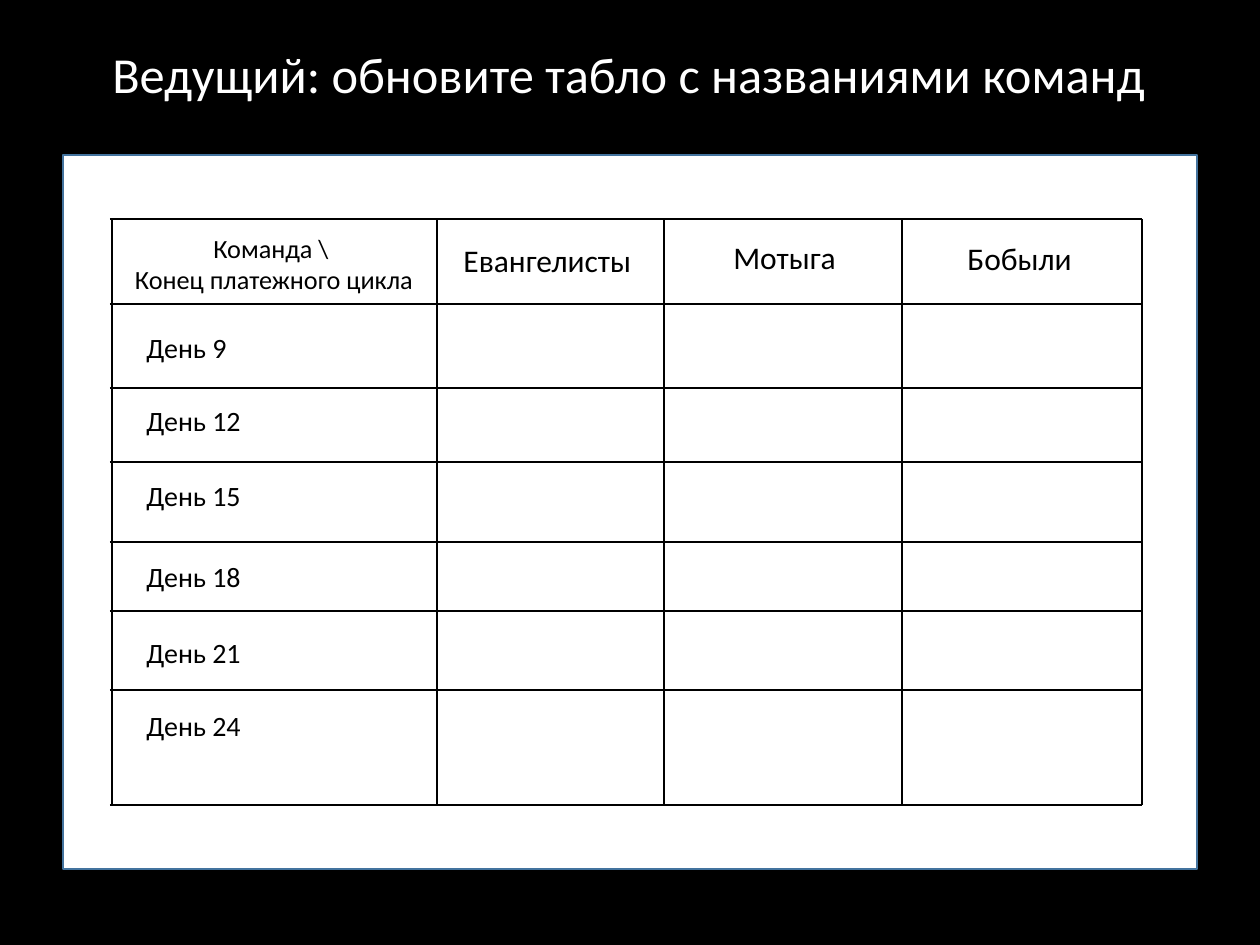
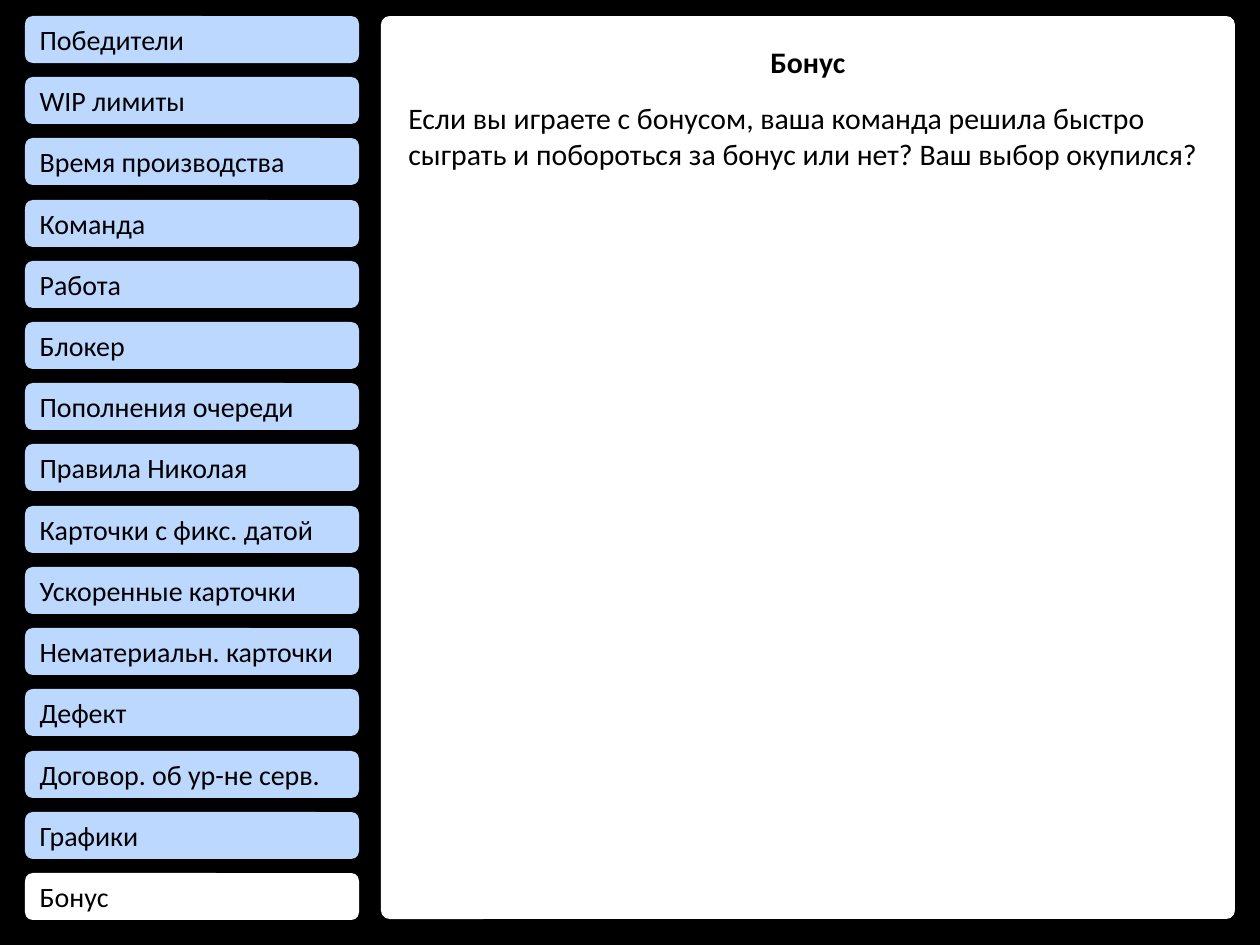
"""Build the team scoreboard slide and the bonus review slide."""

from dataclasses import dataclass

import pptx
import pptx.dml.color
import pptx.enum.shapes
import pptx.enum.text
import pptx.oxml
import pptx.oxml.ns
import pptx.util

RGBColor = pptx.dml.color.RGBColor
ALIGN = pptx.enum.text.PP_ALIGN
ANCHOR = pptx.enum.text.MSO_ANCHOR
FIT = pptx.enum.text.MSO_AUTO_SIZE
SHAPE = pptx.enum.shapes.MSO_SHAPE

BLACK = RGBColor(0x00, 0x00, 0x00)
WHITE = RGBColor(0xFF, 0xFF, 0xFF)
BLUE = RGBColor(0xBD, 0xD8, 0xFF)
EDGE = RGBColor(0x43, 0x73, 0x9E)
FONT = "Calibri"
SCALE = 914400 / 126


@dataclass(frozen=True)
class Box:
    """A place on the slide in px."""

    left: int
    top: int
    width: int
    height: int


@dataclass(frozen=True)
class Label:
    """A text box in the score grid."""

    text: str
    box: Box
    size: int
    align: ALIGN = ALIGN.LEFT


@dataclass(frozen=True)
class Panel:
    """A filled shape."""

    box: Box
    fill: RGBColor = WHITE
    kind: SHAPE = SHAPE.ROUNDED_RECTANGLE


ROWS = (219, 304, 388, 462, 542, 611, 690, 805)
COLS = (112, 437, 664, 902, 1142)
GRID_LEFT = 110
DAYS = ((9, 324), (12, 397), (15, 472), (18, 553), (21, 629), (24, 702))
HEADS = (
    Label("\n".join((r"Команда \ ", "Конец платежного цикла")),
          Box(121, 226, 306, 77), 15, ALIGN.CENTER),
    Label("Евангелисты", Box(451, 235, 195, 50), 18),
    Label("Мотыга", Box(721, 232, 129, 50), 18),
    Label("Бобыли", Box(955, 233, 131, 50), 18),
)
TOPICS = (
    "Победители",
    "WIP лимиты",
    "Время производства",
    "Команда",
    "Работа",
    "Блокер",
    "Пополнения очереди",
    "Правила Николая",
    "Карточки с фикс. датой",
    "Ускоренные карточки",
    "Нематериальн. карточки",
    "Дефект",
    "Договор. об ур-не серв.",
    "Графики",
    "Бонус",
)
ACTIVE = "Бонус"
QUESTION = ("Если вы играете с бонусом, ваша команда решила быстро сыграть "
            "и побороться за бонус или нет? Ваш выбор окупился?")
TAB_TOP, TAB_SPAN = 16, 857


def px(count: int) -> pptx.util.Emu:
    """Turn px into EMU."""
    return pptx.util.Emu(round(count * SCALE))


def place(box: Box) -> tuple:
    """Give the box edges in EMU."""
    return px(box.left), px(box.top), px(box.width), px(box.height)


def write(frame, text: str, size: float, color: RGBColor = BLACK,
          align: ALIGN = ALIGN.LEFT) -> None:
    """Set the text of a frame and format its runs."""
    frame.text = text
    for para in frame.paragraphs:
        para.alignment = align
        for run in para.runs:
            run.font.name = FONT
            run.font.size = pptx.util.Pt(size)
            run.font.color.rgb = color


def add_slide(deck, layout: int):
    """Add a slide with a black ground."""
    slide = deck.slides.add_slide(deck.slide_layouts[layout])
    slide.background.fill.solid()
    slide.background.fill.fore_color.rgb = BLACK
    return slide


def add_panel(slide, panel: Panel):
    """Draw a filled shape with no outline."""
    shape = slide.shapes.add_shape(panel.kind, *place(panel.box))
    shape.shadow.inherit = False
    shape.fill.solid()
    shape.fill.fore_color.rgb = panel.fill
    shape.line.fill.background()
    return shape


def add_line(slide, left: int, top: int, right: int, base: int) -> None:
    """Draw one black grid line."""
    line = slide.shapes.add_connector(
        pptx.enum.shapes.MSO_CONNECTOR.STRAIGHT,
        px(left), px(top), px(right), px(base))
    line.line.color.rgb = BLACK
    line.line.width = pptx.util.Pt(1.5)
    line.element.spPr.append(
        pptx.oxml.parse_xml(f"<a:effectLst {pptx.oxml.ns.nsdecls('a')}/>"))


def add_label(slide, label: Label) -> None:
    """Draw one grid label."""
    frame = slide.shapes.add_textbox(*place(label.box)).text_frame
    frame.word_wrap = False
    frame.auto_size = FIT.SHAPE_TO_FIT_TEXT
    write(frame, label.text, label.size, align=label.align)


def add_title(slide, text: str) -> None:
    """Place and format the slide title."""
    title = slide.shapes.title
    title.left, title.top, title.width, title.height = place(
        Box(86, 31, 1086, 80))
    frame = title.text_frame
    frame.auto_size = FIT.NONE
    frame.vertical_anchor = ANCHOR.BOTTOM
    write(frame, text, 28.8, WHITE, ALIGN.CENTER)
    frame.paragraphs[0].line_spacing = 0.9


def draw_score(deck) -> None:
    """Draw the scoreboard slide."""
    slide = add_slide(deck, 5)
    add_title(slide, "Ведущий: обновите табло с названиями команд")
    board = add_panel(
        slide, Panel(Box(63, 155, 1134, 714), kind=SHAPE.RECTANGLE))
    board.line.color.rgb = EDGE
    board.line.width = pptx.util.Pt(1)
    for top in ROWS:
        add_line(slide, GRID_LEFT, top, COLS[-1], top)
    for left in COLS:
        add_line(slide, left, ROWS[0], left, ROWS[-1])
    for head in HEADS:
        add_label(slide, head)
    for day, top in DAYS:
        width = 107 if day < 10 else 121
        add_label(slide, Label(f"День {day}", Box(134, top, width, 47), 16))


def draw_bonus(deck) -> None:
    """Draw the bonus slide with its topic tabs."""
    slide = add_slide(deck, 6)
    sheet = add_panel(slide, Panel(Box(381, 16, 854, 903)))
    sheet.adjustments[0] = 0.01
    frame = sheet.text_frame
    frame.word_wrap = True
    frame.vertical_anchor = ANCHOR.TOP
    frame.margin_left = frame.margin_right = px(25)
    frame.margin_top = frame.margin_bottom = px(25)
    write(frame, "\n".join((ACTIVE, QUESTION)), 17)
    head, body = frame.paragraphs
    head.alignment = ALIGN.CENTER
    head.runs[0].font.bold = True
    body.space_before = pptx.util.Pt(12)
    for spot, topic in enumerate(TOPICS):
        top = TAB_TOP + round(spot * TAB_SPAN / (len(TOPICS) - 1))
        fill = WHITE if topic == ACTIVE else BLUE
        tab = add_panel(slide, Panel(Box(25, top, 334, 47), fill))
        tab.text_frame.word_wrap = True
        tab.text_frame.vertical_anchor = ANCHOR.MIDDLE
        write(tab.text_frame, topic, 16)


def main() -> None:
    """Build and save the deck."""
    deck = pptx.Presentation()
    deck.slide_width, deck.slide_height = px(1260), px(945)
    draw_score(deck)
    draw_bonus(deck)
    deck.save("out.pptx")


if __name__ == "__main__":
    main()
